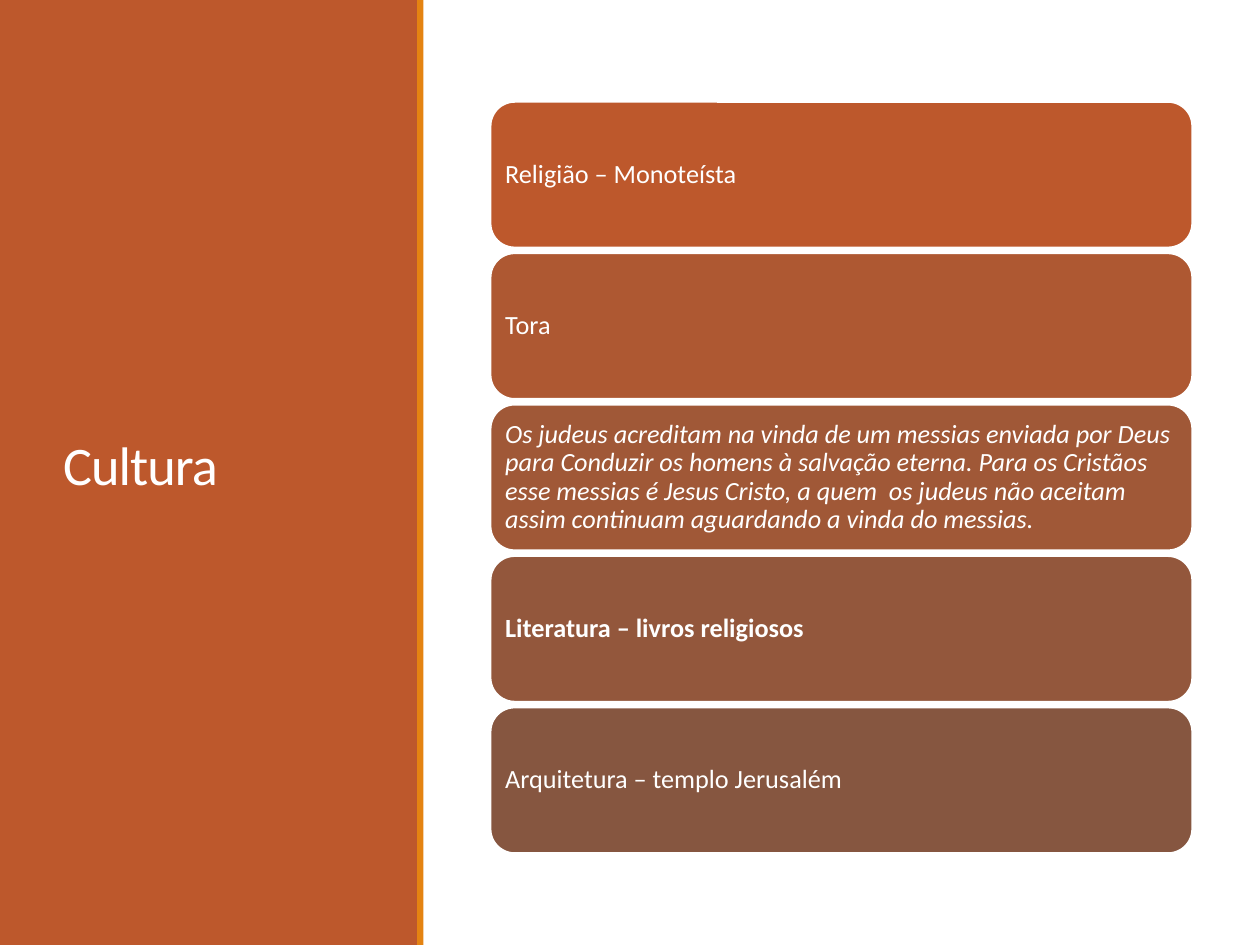
from pptx import Presentation
from pptx.dml.color import RGBColor
from pptx.enum.shapes import MSO_SHAPE as Shape
from pptx.enum.text import MSO_ANCHOR as Anchor, PP_ALIGN as Align
from pptx.util import Pt

WHITE = RGBColor(0xFF, 0xFF, 0xFF)
RUST = RGBColor(0xBD, 0x58, 0x2C)
ORANGE = RGBColor(0xE4, 0x83, 0x12)
CARD_FILLS = [
    RUST,
    RGBColor(0xAE, 0x58, 0x32),
    RGBColor(0xA0, 0x58, 0x37),
    RGBColor(0x93, 0x57, 0x3C),
    RGBColor(0x86, 0x56, 0x40),
]
FONT = "Calibri"

# Text, bold, italic
TOPICS = [
    ("Religião – Monoteísta", False, False),
    ("Tora", False, False),
    ("Os judeus acreditam na vinda de um messias enviada por Deus para "
     "Conduzir os homens à salvação eterna. Para os Cristãos esse messias é "
     "Jesus Cristo, a quem  os judeus não aceitam assim continuam aguardando "
     "a vinda do messias.", False, True),
    ("Literatura – livros religiosos", True, False),
    ("Arquitetura – templo Jerusalém", False, False),
]


def add_block(page, kind, left, top, width, height, fill):
    block = page.shapes.add_shape(kind, Pt(left), Pt(top), Pt(width), Pt(height))
    block.shadow.inherit = False
    block.fill.solid()
    block.fill.fore_color.rgb = fill
    block.line.fill.background()
    return block


def write_text(box, text, size, line_spacing):
    frame = box.text_frame
    frame.text = text
    frame.word_wrap = True
    frame.vertical_anchor = Anchor.MIDDLE
    para = frame.paragraphs[0]
    para.alignment = Align.LEFT
    para.line_spacing = line_spacing
    span = para.runs[0]
    span.font.name = FONT
    span.font.size = Pt(size)
    span.font.color.rgb = WHITE
    return para, span


def build_title_panel(page, left, top, width, height):
    title = page.shapes.title

    # Panel and its accent stripe, kept behind the title
    panel = add_block(page, Shape.RECTANGLE, left, top, width, height, RUST)
    stripe = add_block(page, Shape.RECTANGLE, left + width - 0.7, top, 3.6, height, ORANGE)
    for block in (panel, stripe):
        title.element.addprevious(block.element)

    # Title
    title.left, title.top = Pt(left + 28.8), Pt(top + 41)
    title.width, title.height = Pt(width - 57), Pt(454.3)
    para, span = write_text(title, "Cultura", 31, 0.85)
    span.font._element.set("spc", "-50")


def build_topic_cards(page, left, top, width, height):
    gap = 3.1
    card_height = (height - gap * (len(TOPICS) - 1)) / len(TOPICS)
    for index, ((text, bold, italic), fill) in enumerate(zip(TOPICS, CARD_FILLS)):
        card = add_block(page, Shape.ROUNDED_RECTANGLE, left,
                         top + index * (card_height + gap), width, card_height, fill)
        card.line.color.rgb = WHITE
        card.line.width = Pt(1.25)
        frame = card.text_frame
        frame.margin_left = frame.margin_right = Pt(4.4)
        frame.margin_top = frame.margin_bottom = Pt(4.4)
        para, span = write_text(card, text, 15, 0.9)
        span.font.bold = bold
        span.font.italic = italic


def main():
    deck = Presentation()
    deck.slide_width, deck.slide_height = Pt(720), Pt(540)
    page = deck.slides.add_slide(deck.slide_layouts[5])
    page.background.fill.solid()
    page.background.fill.fore_color.rgb = WHITE
    build_title_panel(page, 0, 0, 239, 540)
    build_topic_cards(page, 280.2, 58.1, 401.2, 429.5)
    deck.save("out.pptx")


if __name__ == "__main__":
    main()
